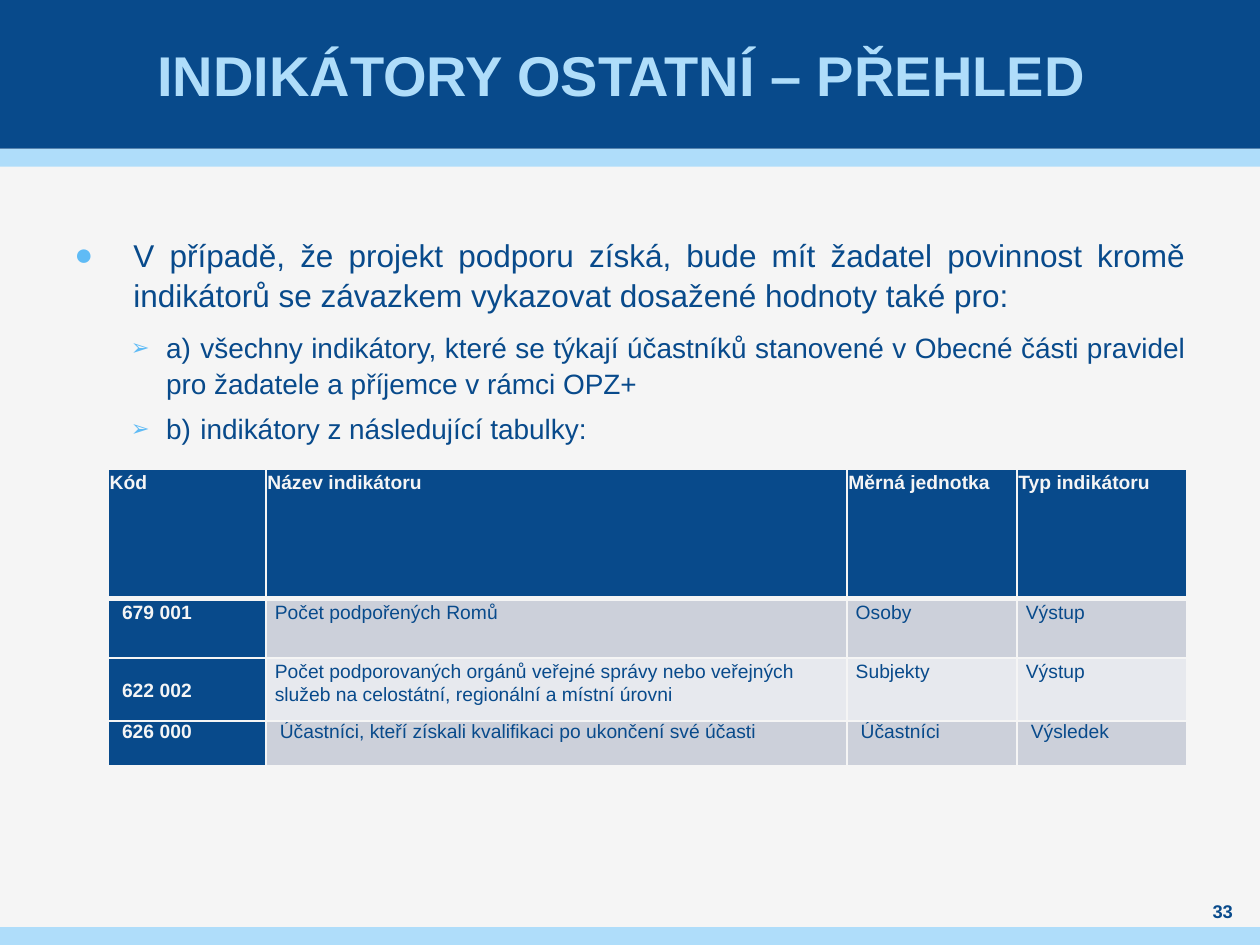
from lxml import etree
from pptx import Presentation
from pptx import util as u
from pptx.dml.color import RGBColor
from pptx.enum import shapes, text
from pptx.oxml import ns

NAVY, SKY, BULLET, PAPER = "084A8B", "AFDDFA", "5FBBF5", "F5F5F5"
DARK_ROW, LIGHT_ROW = "CCD0DA", "E7E9EE"
CENTER, JUSTIFY = text.PP_ALIGN.CENTER, text.PP_ALIGN.JUSTIFY
TOP, MIDDLE = text.MSO_ANCHOR.TOP, text.MSO_ANCHOR.MIDDLE

HEADERS = ["Kód", "Název indikátoru", "Měrná jednotka", "Typ indikátoru"]
INDICATORS = [
    ["679 001", "Počet podpořených Romů", "Osoby", "Výstup"],
    ["622 002", "Počet podporovaných orgánů veřejné správy nebo veřejných "
     "služeb na celostátní, regionální a místní úrovni", "Subjekty", "Výstup"],
    ["626 000", "Účastníci, kteří získali kvalifikaci po ukončení své účasti",
     "Účastníci", "Výsledek"],
]
COLUMN_WIDTHS = [3.18, 11.71, 3.43, 3.43]
ROW_HEIGHTS = [2.62, 1.19, 1.27, 0.91]

INTRO = ("V případě, že projekt podporu získá, bude mít žadatel povinnost kromě "
         "indikátorů se závazkem vykazovat dosažené hodnoty také pro:")
SUBPOINTS = [
    "a)\tvšechny indikátory, které se týkají účastníků stanovené v Obecné části "
    "pravidel pro žadatele a příjemce v rámci OPZ+",
    "b)\tindikátory z následující tabulky:",
]


def color(value):
    return RGBColor.from_string(value)


def apply(target, values):
    for name, value in values.items():
        setattr(target, name, value)


def paint(fill, value):
    fill.solid()
    fill.fore_color.rgb = color(value)


def add_band(slide, top, height, value):
    band = slide.shapes.add_shape(shapes.MSO_SHAPE.RECTANGLE, 0, u.Cm(top),
                                  u.Cm(25.4), u.Cm(height))
    band.shadow.inherit = False
    paint(band.fill, value)
    band.line.fill.background()


def add_frame(slide, left, top, width, height, anchor, side=0):
    box = slide.shapes.add_textbox(*map(u.Cm, (left, top, width, height)))
    frame = box.text_frame
    apply(frame, {"word_wrap": True, "vertical_anchor": anchor,
                  "margin_left": u.Cm(side), "margin_right": u.Cm(side),
                  "margin_top": 0, "margin_bottom": 0})
    return frame


def write(paragraph, words, size, value, bold=False, **layout):
    run = paragraph.add_run()
    run.text = words
    apply(run.font, {"name": "Arial", "size": u.Pt(size), "bold": bold})
    run.font.color.rgb = color(value)
    apply(paragraph, layout)


def indent(paragraph, left, hanging=0):
    properties = paragraph._p.get_or_add_pPr()
    properties.set("marL", str(u.Cm(left)))
    properties.set("indent", str(-u.Cm(hanging)))
    return properties


def add_bullet(paragraph, sign, left, hanging, percent=100):
    properties = indent(paragraph, left, hanging)
    tint = etree.SubElement(properties, ns.qn("a:buClr"))
    etree.SubElement(tint, ns.qn("a:srgbClr"), val=BULLET)
    etree.SubElement(properties, ns.qn("a:buSzPct"), val=str(percent * 1000))
    etree.SubElement(properties, ns.qn("a:buFont"), typeface="Arial")
    etree.SubElement(properties, ns.qn("a:buChar"), char=sign)


def add_borders(cell, widths):
    properties = cell._tc.get_or_add_tcPr()
    for position, (side, points) in enumerate(widths.items()):
        line = etree.Element(ns.qn(f"a:ln{side}"), w=str(u.Pt(points)))
        fill = etree.SubElement(line, ns.qn("a:solidFill"))
        etree.SubElement(fill, ns.qn("a:srgbClr"), val=PAPER)
        properties.insert(position, line)


def add_explanation(slide):
    frame = add_frame(slide, 1.5, 4.72, 22.4, 12.19, TOP)
    intro = frame.paragraphs[0]
    write(intro, INTRO, 18, NAVY, alignment=JUSTIFY, line_spacing=1.05,
          space_before=u.Pt(6), space_after=u.Pt(6))
    add_bullet(intro, "●", 1.19, 1.19)
    for words in SUBPOINTS:
        subpoint = frame.add_paragraph()
        write(subpoint, words, 16, NAVY, level=1, alignment=JUSTIFY,
              line_spacing=1.05, space_before=u.Pt(3), space_after=u.Pt(3))
        add_bullet(subpoint, "➢", 1.85, 0.71, 80)


def fill_cell(cell, words, row, column):
    header, code, last = row == 0, column == 0, row == len(INDICATORS)
    strong = header or code
    side = u.Cm(0.03 if header else 0.18)
    apply(cell, {"margin_left": side, "margin_right": side,
                 "margin_top": u.Cm(0 if last else 0.03), "margin_bottom": 0,
                 "vertical_anchor": MIDDLE if code and row == 2 else TOP})
    paint(cell.fill, NAVY if strong else DARK_ROW if row % 2 else LIGHT_ROW)
    if last:
        layout = {"alignment": JUSTIFY, "space_before": u.Pt(2), "space_after": u.Pt(2)}
    else:
        layout = {"line_spacing": 1.07, "space_after": u.Pt(8)}
    paragraph = cell.text_frame.paragraphs[0]
    write(paragraph, words, 11, PAPER if strong else NAVY, strong, **layout)
    if last or (code and not header):
        indent(paragraph, 0.1)
    add_borders(cell, {"L": 1, "R": 1, "T": 3 if row == 1 else 1, "B": 3 if header else 1})


def add_indicator_table(slide):
    rows = [HEADERS, *INDICATORS]
    table = slide.shapes.add_table(
        len(rows), len(HEADERS), u.Cm(2.18), u.Cm(9.45),
        u.Cm(sum(COLUMN_WIDTHS)), u.Cm(sum(ROW_HEIGHTS))).table
    apply(table, {"first_row": True, "first_col": True, "horz_banding": False})
    for column, width in zip(table.columns, COLUMN_WIDTHS):
        column.width = u.Cm(width)
    for row, height in zip(table.rows, ROW_HEIGHTS):
        row.height = u.Cm(height)
    for row, values in enumerate(rows):
        for column, words in enumerate(values):
            fill_cell(table.cell(row, column), words, row, column)


def main():
    deck = Presentation()
    apply(deck, {"slide_width": u.Cm(25.4), "slide_height": u.Cm(19.05)})
    slide = deck.slides.add_slide(deck.slide_layouts[6])
    paint(slide.background.fill, PAPER)
    for top, height, value in [(3, 0.36, SKY), (0, 3, NAVY), (18.69, 0.36, SKY)]:
        add_band(slide, top, height, value)
    title = add_frame(slide, 0.99, 0, 23.39, 3, MIDDLE, 0.1)
    write(title.paragraphs[0], "INDIKÁTORY OSTATNÍ – PŘEHLED ", 32, SKY, True,
          alignment=CENTER)
    add_explanation(slide)
    page_number = add_frame(slide, 24, 18.11, 1.3, 0.51, MIDDLE)
    write(page_number.paragraphs[0], "33", 10.5, NAVY, True, alignment=CENTER)
    add_indicator_table(slide)
    deck.save("out.pptx")


if __name__ == "__main__":
    main()
